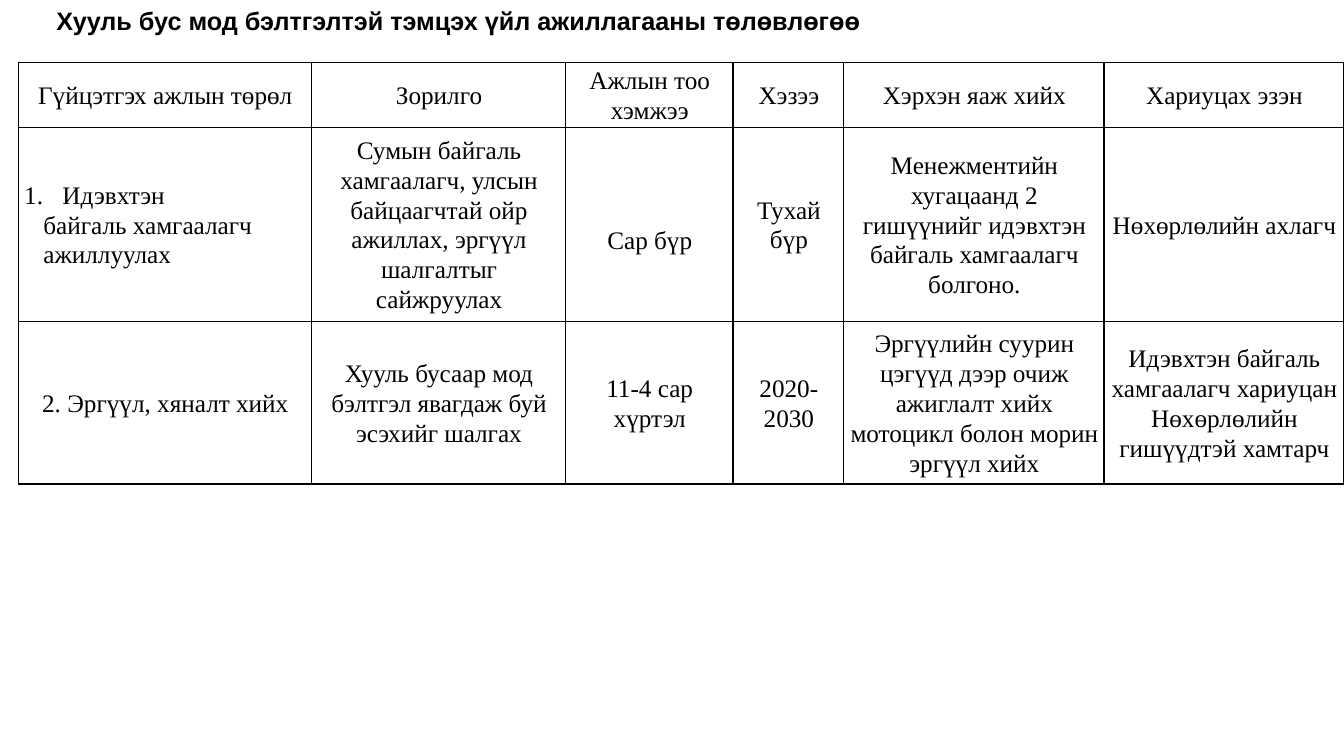
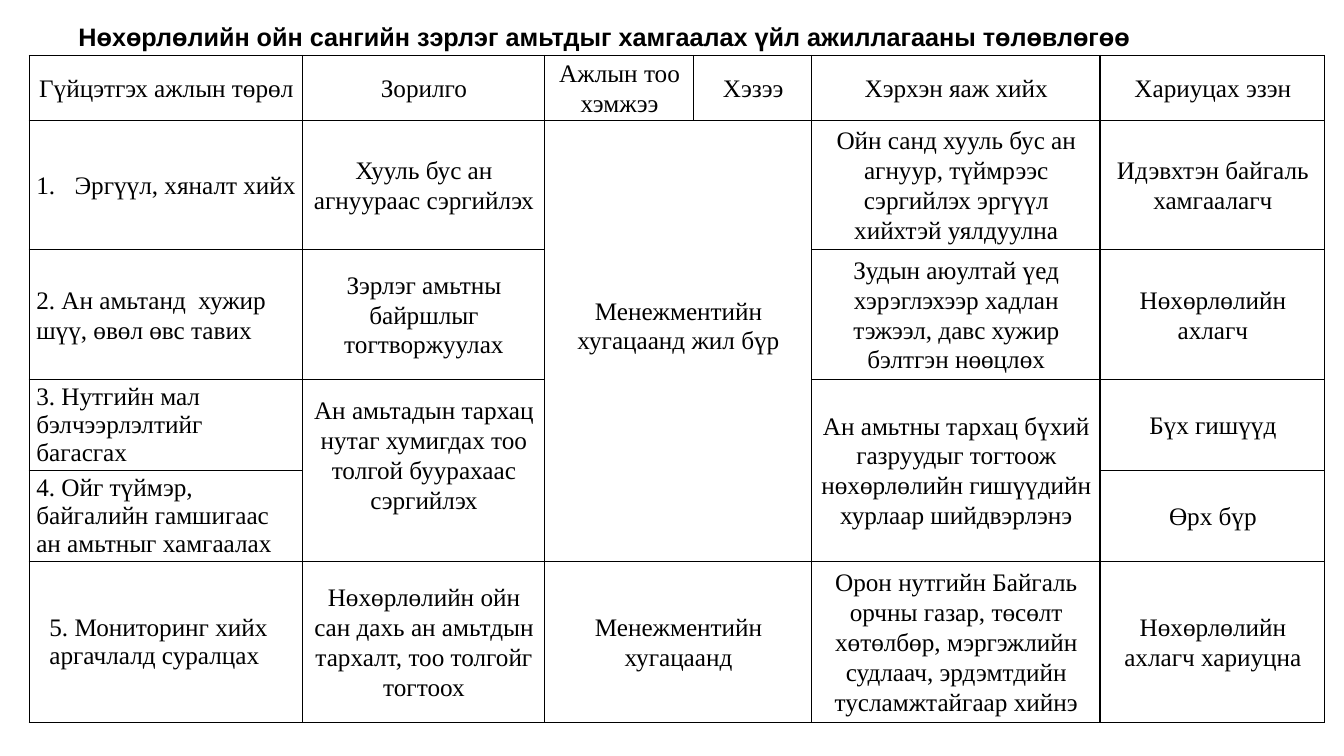
"""Build two slides of forest protection action plans, each a title over a table."""
from lxml import etree
from pptx import Presentation
from pptx.dml.color import RGBColor
from pptx.enum.text import MSO_ANCHOR, PP_ALIGN
from pptx.oxml.ns import qn
from pptx.util import Inches, Pt

CENTER, LEFT = PP_ALIGN.CENTER, PP_ALIGN.LEFT
MIDDLE = MSO_ANCHOR.MIDDLE
COLORS = {"ink": "000000", "paper": "FFFFFF"}
TITLE_FONT, TABLE_FONT = "Arial", "Times New Roman"
TEXT_SIZE, BORDER_WIDTH = 18, 1
LOOSE = 1.07
HEADER = ["Гүйцэтгэх ажлын төрөл", "Зорилго", "Ажлын тоо хэмжээ",
          "Хэзээ", "Хэрхэн яаж хийх", "Хариуцах эзэн"]


def entry(*lines, span=(1, 1), top=0, bottom=0):
    """Describe a cell; each line is a text or a (text, format) pair."""
    return {"lines": lines, "span": span, "top": top, "bottom": bottom}


NUMBERED = {"align": LEFT, "indent": 0.38, "first": -0.38, "numbered": True}
PLAIN = {"align": LEFT}
TIGHT = {"align": LEFT, "spacing": 1.0}

PLANS = [
    {
        "title": "Хууль бус мод бэлтгэлтэй тэмцэх үйл ажиллагааны төлөвлөгөө",
        "title_at": (0.46, 0, 12.59, 0.4),
        "title_spacing": 1.0,
        "table_at": (0.18, 0.62),
        "margins": (0.06, 0.05),
        "columns": [2.91, 2.52, 1.66, 1.1, 2.58, 2.38],
        "heights": [0.64, 1.93, 1.61],
        "rows": [
            HEADER,
            [entry(("Идэвхтэн", NUMBERED),
                   ("байгаль хамгаалагч ажиллуулах", {"align": LEFT, "indent": 0.19})),
             "Сумын байгаль хамгаалагч, улсын байцаагчтай ойр ажиллах, "
             "эргүүл шалгалтыг сайжруулах",
             entry("Сар бүр", top=0.3),
             "Тухай бүр",
             "Менежментийн хугацаанд 2 гишүүнийг идэвхтэн байгаль хамгаалагч болгоно.",
             "Нөхөрлөлийн ахлагч"],
            ["2. Эргүүл, хяналт хийх",
             "Хууль бусаар мод бэлтгэл явагдаж буй эсэхийг шалгах",
             "11-4 сар хүртэл",
             "2020-2030",
             "Эргүүлийн суурин цэгүүд дээр очиж ажиглалт хийх мотоцикл болон "
             "морин эргүүл хийх",
             "Идэвхтэн байгаль хамгаалагч хариуцан Нөхөрлөлийн гишүүдтэй хамтарч"],
        ],
    },
    {
        "title": "Нөхөрлөлийн ойн сангийн зэрлэг амьтдыг хамгаалах "
                 "үйл ажиллагааны төлөвлөгөө",
        "title_at": (0.68, 0.14, 11.68, 0.41),
        "title_spacing": LOOSE,
        "table_at": (0.29, 0.55),
        "margins": (0.07, 0.06),
        "columns": [2.71, 2.4, 1.48, 1.17, 2.86, 2.23],
        "heights": [0.64, 1.28, 1.29, 0.9, 0.9, 1.6],
        "rows": [
            HEADER,
            [entry(("Эргүүл, хяналт хийх", NUMBERED)),
             "Хууль бус ан агнуураас сэргийлэх",
             entry("Менежментийн хугацаанд жил бүр", span=(4, 2), bottom=0.3),
             None,
             "Ойн санд хууль бус ан агнуур, түймрээс сэргийлэх эргүүл хийхтэй уялдуулна",
             "Идэвхтэн байгаль хамгаалагч"],
            [entry(("2. Ан амьтанд  хужир шүү, өвөл өвс тавих", PLAIN)),
             "Зэрлэг амьтны байршлыг тогтворжуулах",
             None,
             None,
             "Зудын аюултай үед хэрэглэхээр хадлан тэжээл, давс хужир бэлтгэн нөөцлөх",
             "Нөхөрлөлийн ахлагч"],
            [entry(("3. Нутгийн мал бэлчээрлэлтийг багасгах", TIGHT)),
             entry("Ан амьтадын тархац нутаг хумигдах тоо толгой буурахаас сэргийлэх",
                   span=(2, 1), bottom=0.3),
             None,
             None,
             entry("Ан амьтны тархац бүхий газруудыг тогтоож нөхөрлөлийн гишүүдийн "
                   "хурлаар шийдвэрлэнэ", span=(2, 1)),
             "Бүх гишүүд"],
            [entry(("4. Ойг түймэр, байгалийн гамшигаас ан амьтныг хамгаалах", TIGHT)),
             None, None, None, None,
             "Өрх бүр"],
            [entry(("5. Мониторинг хийх аргачлалд суралцах", {**TIGHT, "indent": 0.13})),
             "Нөхөрлөлийн ойн сан дахь ан амьтдын тархалт, тоо толгойг тогтоох",
             entry("Менежментийн хугацаанд", span=(1, 2)),
             None,
             "Орон нутгийн Байгаль орчны газар, төсөлт хөтөлбөр, мэргэжлийн судлаач, "
             "эрдэмтдийн тусламжтайгаар хийнэ",
             "Нөхөрлөлийн ахлагч хариуцна"],
        ],
    },
]


def write(para, text, font=TABLE_FONT, bold=False, align=CENTER, spacing=LOOSE,
          indent=0, first=0, numbered=False):
    para.alignment = align
    para.line_spacing = spacing
    properties = para._p.get_or_add_pPr()
    properties.set("marL", str(Inches(indent)))
    properties.set("indent", str(Inches(first)))
    if numbered:
        etree.SubElement(properties, qn("a:buAutoNum"), type="arabicPeriod")
    span = para.add_run()
    span.text = text
    span.font.name = font
    span.font.size = Pt(TEXT_SIZE)
    span.font.bold = bold
    span.font.color.rgb = RGBColor.from_string(COLORS["ink"])


def add_borders(cell):
    properties = cell._tc.get_or_add_tcPr()
    for position, side in enumerate(("lnL", "lnR", "lnT", "lnB")):
        line = etree.Element(qn(f"a:{side}"), w=str(Pt(BORDER_WIDTH)))
        fill = etree.SubElement(line, qn("a:solidFill"))
        etree.SubElement(fill, qn("a:srgbClr"), val=COLORS["ink"])
        properties.insert(position, line)


def fill_cell(cell, content, margins):
    cell.margin_left, cell.margin_right = map(Inches, margins)
    cell.margin_top = cell.margin_bottom = 0
    cell.vertical_anchor = MIDDLE
    cell.fill.solid()
    cell.fill.fore_color.rgb = RGBColor.from_string(COLORS["paper"])
    add_borders(cell)
    if content is None:
        return
    if isinstance(content, str):
        content = entry(content)
    cell.margin_top = Inches(content["top"])
    cell.margin_bottom = Inches(content["bottom"])
    frame = cell.text_frame
    for number, line in enumerate(content["lines"]):
        text, style = (line, {}) if isinstance(line, str) else line
        para = frame.add_paragraph() if number else frame.paragraphs[0]
        write(para, text, **style)


def add_title(page, plan):
    box = page.shapes.add_textbox(*map(Inches, plan["title_at"]))
    box.text_frame.word_wrap = True
    write(box.text_frame.paragraphs[0], plan["title"], font=TITLE_FONT, bold=True,
          align=LEFT, spacing=plan["title_spacing"])


def add_plan_table(page, plan):
    rows, columns, heights = plan["rows"], plan["columns"], plan["heights"]
    left, top = plan["table_at"]
    table = page.shapes.add_table(len(rows), len(columns), Inches(left), Inches(top),
                                  Inches(sum(columns)), Inches(sum(heights))).table
    table.first_row = table.horz_banding = False
    for column, width in zip(table.columns, columns):
        column.width = Inches(width)
    for row, height in zip(table.rows, heights):
        row.height = Inches(height)
    for r, contents in enumerate(rows):
        for c, content in enumerate(contents):
            fill_cell(table.cell(r, c), content, plan["margins"])
            if isinstance(content, dict) and content["span"] != (1, 1):
                down, across = content["span"]
                table.cell(r, c).merge(table.cell(r + down - 1, c + across - 1))


def main():
    deck = Presentation()
    deck.slide_width, deck.slide_height = Inches(13.33), Inches(7.5)
    for plan in PLANS:
        page = deck.slides.add_slide(deck.slide_layouts[6])
        add_title(page, plan)
        add_plan_table(page, plan)
    deck.save("out.pptx")


if __name__ == "__main__":
    main()
